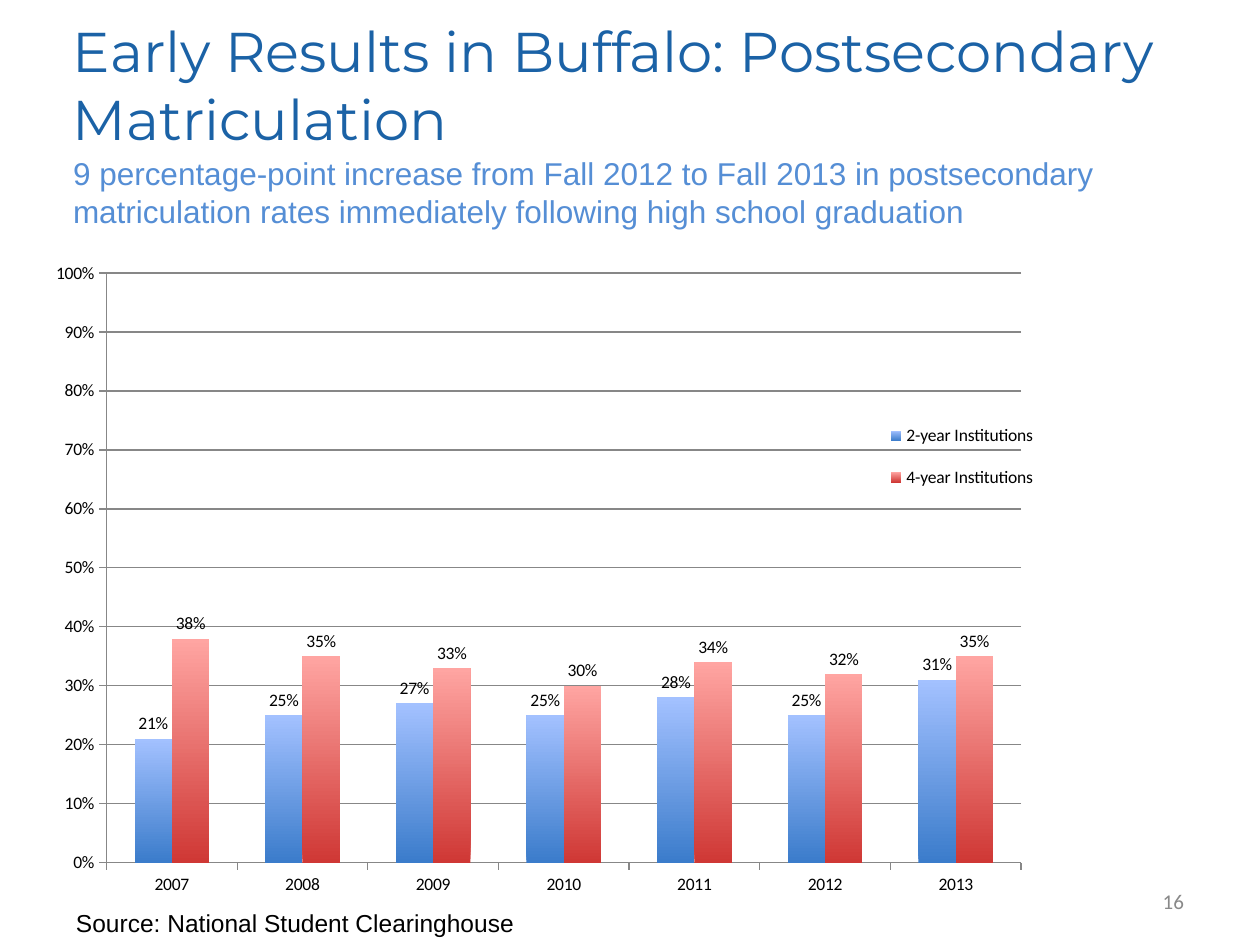
import pptx
import pptx.chart.data
import pptx.dml.color
import pptx.enum.chart
import pptx.enum.text
import pptx.oxml
import pptx.oxml.ns
import pptx.util

RGB = pptx.dml.color.RGBColor
HEADING_BLUE = RGB(0x1B, 0x62, 0xA6)
SUBTITLE_BLUE = RGB(0x55, 0x8E, 0xD5)
NUMBER_GRAY = RGB(0x89, 0x89, 0x89)
GRID_GRAY = RGB(0x87, 0x87, 0x87)
BLACK = RGB(0x00, 0x00, 0x00)
TWO_YEAR_DARK = RGB(0x3B, 0x7C, 0xCB)
TWO_YEAR_LIGHT = RGB(0xA3, 0xC1, 0xFF)
FOUR_YEAR_DARK = RGB(0xCF, 0x38, 0x35)
FOUR_YEAR_LIGHT = RGB(0xFF, 0xA5, 0xA2)

PX = 914400 / 126
LEFT = pptx.enum.text.PP_ALIGN.LEFT
RIGHT = pptx.enum.text.PP_ALIGN.RIGHT
TOP = pptx.enum.text.MSO_ANCHOR.TOP
MIDDLE = pptx.enum.text.MSO_ANCHOR.MIDDLE


def emu(px):
    return pptx.util.Emu(round(px * PX))


class SlideBuilder:
    def __init__(self, presentation):
        self.slide = presentation.slides.add_slide(presentation.slide_layouts[5])

    def set_text(self, shape, words, size, font, color, align=LEFT, anchor=MIDDLE, inset=(0, 0)):
        frame = shape.text_frame
        frame.word_wrap = True
        frame.auto_size = pptx.enum.text.MSO_AUTO_SIZE.NONE
        frame.vertical_anchor = anchor
        frame.margin_left = frame.margin_right = emu(inset[0])
        frame.margin_top = frame.margin_bottom = emu(inset[1])
        frame.text = words
        paragraph = frame.paragraphs[0]
        paragraph.alignment = align
        paragraph.font.size = pptx.util.Pt(size)
        paragraph.font.name = font
        paragraph.font.color.rgb = color

    def title(self, box, words, **style):
        title = self.slide.shapes.title
        title.left, title.top, title.width, title.height = map(emu, box)
        self.set_text(title, words, **style)

    def text(self, box, words, **style):
        self.set_text(self.slide.shapes.add_textbox(*map(emu, box)), words, **style)

    def place(self, part, index, fractions, target=""):
        for old in part.findall(pptx.oxml.ns.qn("c:layout")):
            part.remove(old)
        modes = '<c:xMode val="edge"/><c:yMode val="edge"/>'
        extent = "".join(f'<c:{key} val="{value}"/>' for key, value in zip("xywh", fractions))
        part.insert(index, pptx.oxml.parse_xml(
            f'<c:layout {pptx.oxml.ns.nsdecls("c")}><c:manualLayout>'
            f"{target}{modes}{extent}</c:manualLayout></c:layout>"))

    def column_chart(self, box, categories, series, plot_area, legend_area):
        rates = pptx.chart.data.CategoryChartData(number_format="0%")
        rates.categories = categories
        for name, values, *_ in series:
            rates.add_series(name, values)
        chart = self.slide.shapes.add_chart(
            pptx.enum.chart.XL_CHART_TYPE.COLUMN_CLUSTERED, *map(emu, box), rates).chart
        chart.has_title = False
        chart.font.size = pptx.util.Pt(10)
        chart.font.name = "Calibri"
        chart.font.color.rgb = BLACK

        columns = chart.plots[0]
        columns.gap_width = 150
        columns.overlap = 0
        columns.vary_by_categories = False
        columns.has_data_labels = True
        labels = columns.data_labels
        labels.show_value = True
        labels.number_format = "0%"
        labels.number_format_is_linked = False
        labels.position = pptx.enum.chart.XL_LABEL_POSITION.OUTSIDE_END
        for column, (_, _, dark, light) in zip(columns.series, series):
            fill = column.format.fill
            fill.gradient()
            fill.gradient_angle = 90
            for stop, color in zip(fill.gradient_stops, (dark, light)):
                stop.color.rgb = color
            column.format.line.fill.background()

        rate_axis = chart.value_axis
        rate_axis.minimum_scale, rate_axis.maximum_scale = 0, 1
        rate_axis.major_unit = 0.1
        rate_axis.has_major_gridlines = True
        rate_axis.tick_labels.number_format = "0%"
        rate_axis.tick_labels.number_format_is_linked = False
        for axis in (rate_axis, chart.category_axis):
            axis.major_tick_mark = pptx.enum.chart.XL_TICK_MARK.OUTSIDE
            axis.minor_tick_mark = pptx.enum.chart.XL_TICK_MARK.NONE
        for ruled in (rate_axis, chart.category_axis, rate_axis.major_gridlines):
            ruled.format.line.color.rgb = GRID_GRAY
            ruled.format.line.width = pptx.util.Pt(0.75)

        chart.has_legend = True
        legend = chart.legend
        legend.position = pptx.enum.chart.XL_LEGEND_POSITION.RIGHT
        legend.include_in_layout = False
        plot = chart.element.find(".//" + pptx.oxml.ns.qn("c:plotArea"))
        key = chart.element.find(".//" + pptx.oxml.ns.qn("c:legend"))
        self.place(plot, 0, plot_area, '<c:layoutTarget val="inner"/>')
        self.place(key, 1, legend_area)


def main():
    presentation = pptx.Presentation()
    presentation.slide_width = emu(1260)
    presentation.slide_height = emu(945)
    page = SlideBuilder(presentation)
    page.title(
        (73, 136, 1134, 111),
        "9 percentage-point increase from Fall 2012 to Fall 2013 in postsecondary "
        "matriculation rates immediately following high school graduation",
        size=18, font="Arial", color=SUBTITLE_BLUE)
    page.text((903, 876, 294, 50), "16", size=12, font="Calibri", color=NUMBER_GRAY,
              align=RIGHT, inset=(13, 6))
    page.column_chart(
        (42, 247, 1076, 655),
        [str(year) for year in range(2007, 2014)],
        [("2-year Institutions", (0.21, 0.25, 0.27, 0.25, 0.28, 0.25, 0.31),
          TWO_YEAR_DARK, TWO_YEAR_LIGHT),
         ("4-year Institutions", (0.38, 0.35, 0.33, 0.30, 0.34, 0.32, 0.35),
          FOUR_YEAR_DARK, FOUR_YEAR_LIGHT)],
        plot_area=(0.06, 0.04, 0.85, 0.9),
        legend_area=(0.78, 0.24, 0.15, 0.16))
    page.text((63, 902, 662, 43), "Source: National Student Clearinghouse",
              size=14, font="Arial", color=BLACK, anchor=TOP, inset=(13, 6))
    page.text((73, 5, 1134, 158), "Early Results in Buffalo: Postsecondary Matriculation",
              size=32, font="Montserrat", color=HEADING_BLUE)
    presentation.save("out.pptx")


if __name__ == "__main__":
    main()
